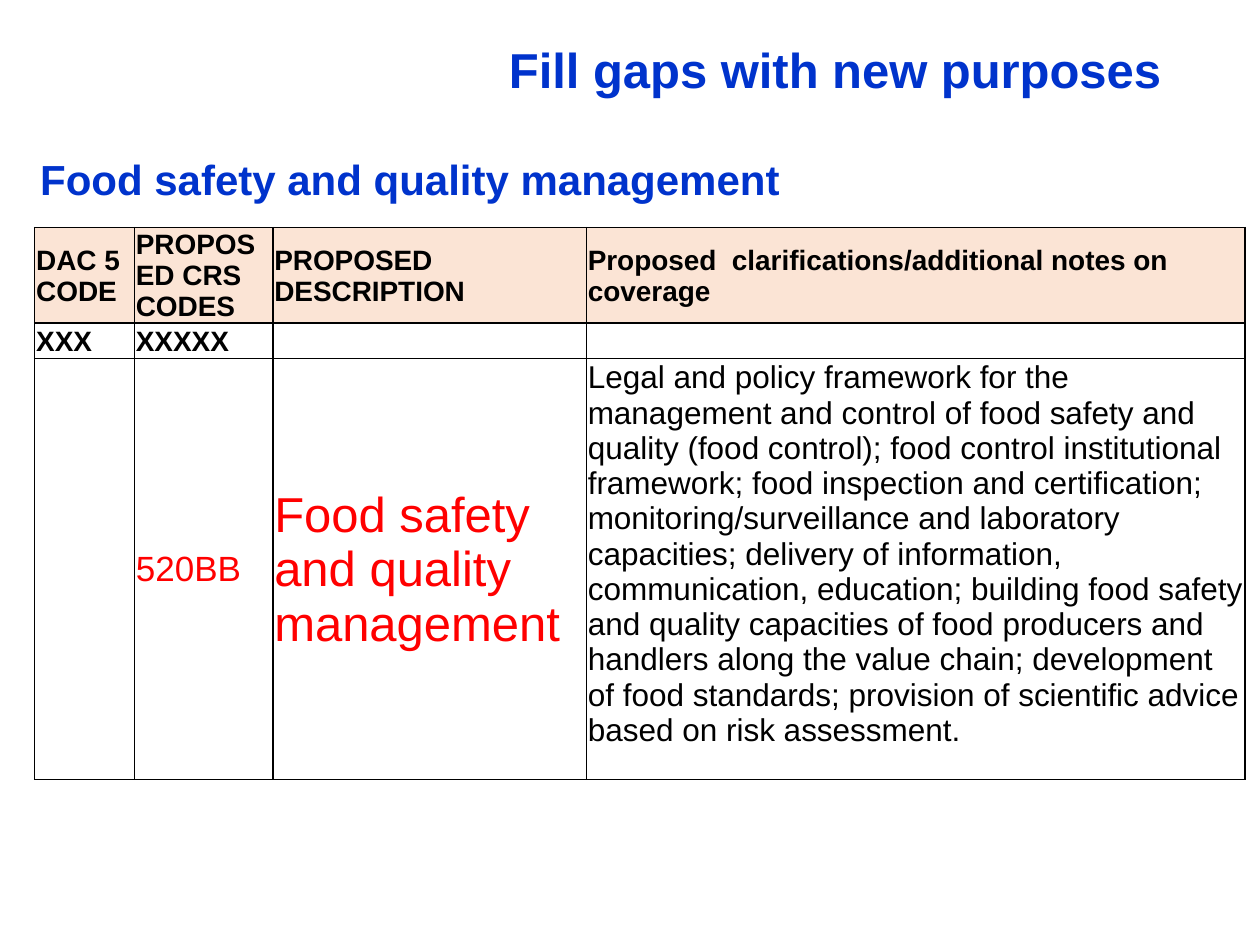
from pptx import Presentation
from pptx.dml.color import RGBColor
from pptx.enum.text import MSO_ANCHOR
from pptx.oxml.ns import qn
from pptx.util import Cm, Pt
from lxml.etree import SubElement

BLUE = RGBColor(0x00, 0x33, 0xCC)
RED = RGBColor(0xFF, 0x00, 0x00)
BLACK = RGBColor(0x00, 0x00, 0x00)
PEACH = RGBColor(0xFB, 0xE4, 0xD5)
WHITE = RGBColor(0xFF, 0xFF, 0xFF)

COLS = [2.01, 2.79, 6.32, 13.28]
ROWS = [1.92, 0.64, 8.48]
NOTES = (
    "Legal and policy framework for the management and control of food safety "
    "and quality (food control); food control institutional framework; food "
    "inspection and certification; monitoring/surveillance and laboratory "
    "capacities; delivery of information, communication, education; building "
    "food safety and quality capacities of food producers and handlers along "
    "the value chain; development of food standards; provision of scientific "
    "advice based on risk assessment."
)

# Each cell: text, size, colour, bold
HEAD = ["DAC 5 CODE", "PROPOSED CRS CODES", "PROPOSED DESCRIPTION",
        "Proposed  clarifications/additional notes on coverage"]
CELLS = [
    [(text, 16, BLACK, True) for text in HEAD],
    [(text, 16, BLACK, True) for text in ("XXX", "XXXXX", "", "")],
    [("", 16, BLACK, False),
     ("520BB", 20, RED, False),
     ("Food safety and quality management", 28, RED, False),
     (NOTES, 18, BLACK, False)],
]


def add_run(para, text, size, color, bold):
    run = para.add_run()
    run.text = text
    font = run.font
    font.name = "Arial"
    font.size = Pt(size)
    font.bold = bold
    font.color.rgb = color


def add_title(slide, left, top, width, height, text, size):
    box = slide.shapes.add_textbox(Cm(left), Cm(top), Cm(width), Cm(height))
    frame = box.text_frame
    frame.word_wrap = True
    frame.vertical_anchor = MSO_ANCHOR.MIDDLE
    add_run(frame.paragraphs[0], text, size, BLUE, True)


def add_edges(cell):
    props = cell._tc.get_or_add_tcPr()
    for spot, side in enumerate(("a:lnL", "a:lnR", "a:lnT", "a:lnB")):
        line = SubElement(props, qn(side), w=str(Pt(1)))
        fill = SubElement(line, qn("a:solidFill"))
        SubElement(fill, qn("a:srgbClr"), val=str(BLACK))
        # Borders come before the cell's fill
        props.insert(spot, line)


def fill_cell(cell, text, size, color, bold):
    cell.margin_left = cell.margin_right = cell.margin_top = Cm(0.03)
    cell.margin_bottom = 0
    cell.vertical_anchor = MSO_ANCHOR.TOP if text == NOTES else MSO_ANCHOR.MIDDLE
    para = cell.text_frame.paragraphs[0]
    if text:
        add_run(para, text, size, color, bold)
    else:
        # Keeps an empty cell from stretching its row
        SubElement(para._p, qn("a:endParaRPr"), sz=str(size * 100))


def add_grid(slide, left, top):
    frame = slide.shapes.add_table(len(ROWS), len(COLS), Cm(left), Cm(top),
                                   Cm(sum(COLS)), Cm(sum(ROWS)))
    table = frame.table
    table.first_row = table.horz_banding = False
    for col, width in zip(table.columns, COLS):
        col.width = Cm(width)
    for r, (row, height) in enumerate(zip(table.rows, ROWS)):
        row.height = Cm(height)
        for cell, item in zip(row.cells, CELLS[r]):
            fill_cell(cell, *item)
            if r == 0:
                cell.fill.solid()
                cell.fill.fore_color.rgb = PEACH
            else:
                cell.fill.background()
            add_edges(cell)


def main():
    deck = Presentation()
    deck.slide_width, deck.slide_height = Cm(25.4), Cm(19.05)
    slide = deck.slides.add_slide(deck.slide_layouts[6])
    back = slide.background.fill
    back.solid()
    back.fore_color.rgb = WHITE

    # Table, subtitle and title
    add_grid(slide, 0.7, 4.59)
    add_title(slide, 0.56, 2.97, 24.69, 1.27,
              "Food safety and quality management", 24)
    add_title(slide, 10.01, 0.66, 15.39, 1.45,
              "Fill gaps with new purposes", 28)
    deck.save("out.pptx")


if __name__ == "__main__":
    main()
